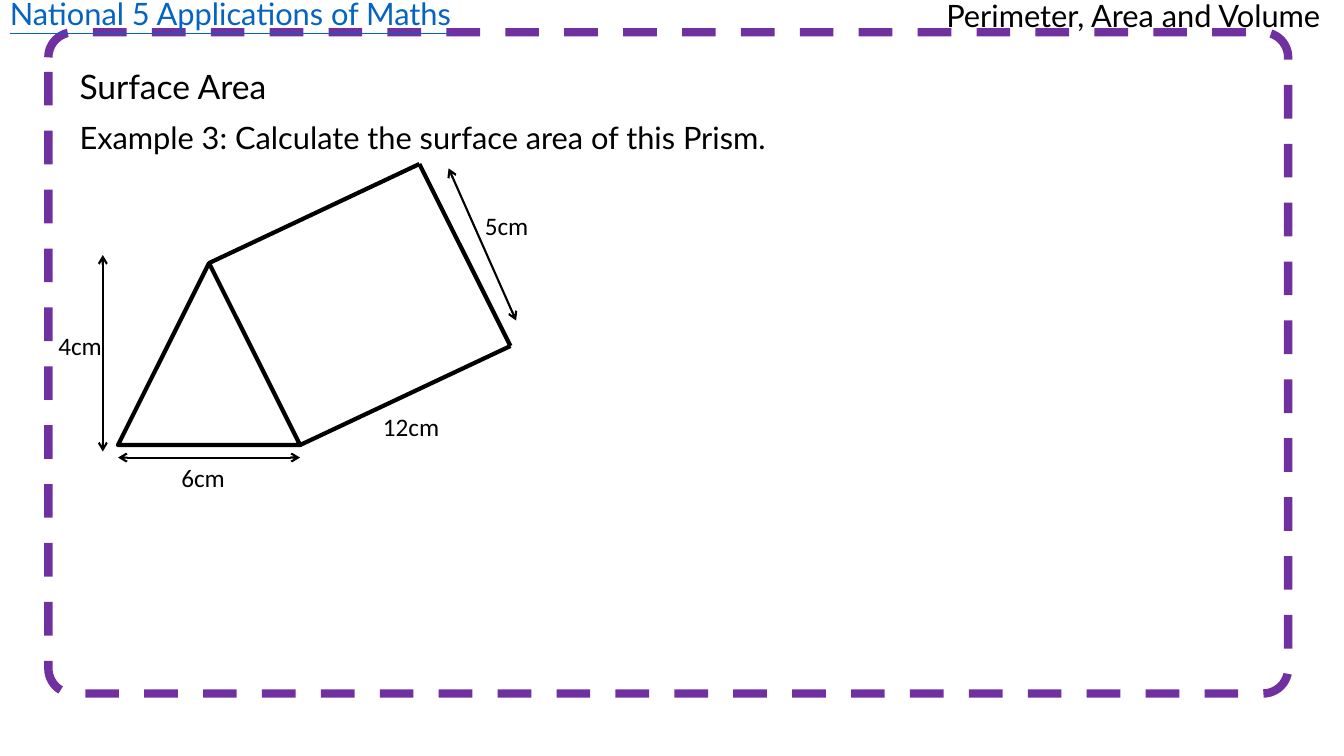
import pptx
import pptx.util
import pptx.dml.color
import pptx.enum.dml
import pptx.enum.shapes
import pptx.enum.text
import pptx.oxml
import pptx.oxml.ns

BLACK = pptx.dml.color.RGBColor(0x00, 0x00, 0x00)
PURPLE = pptx.dml.color.RGBColor(0x70, 0x30, 0xA0)
LINK_BLUE = pptx.dml.color.RGBColor(0x05, 0x63, 0xC1)
SHAPES = pptx.enum.shapes.MSO_SHAPE


class Board:
    """Draws on one slide; every length is a percentage of the slide's size."""

    heading_font = "Lato"
    label_font = "Calibri"
    edge_width = 3
    dimension_width = 1.5

    def __init__(self, presentation):
        self.width = presentation.slide_width
        self.height = presentation.slide_height
        self.slide = presentation.slides.add_slide(presentation.slide_layouts[6])

    def scale(self, *lengths):
        """Turn alternating horizontal and vertical percentages into EMU."""
        sizes = (self.width, self.height) * 2
        return [round(size * length / 100) for size, length in zip(sizes, lengths)]

    def format(self, target, values):
        for name, value in values.items():
            setattr(target, name, value)

    def style_line(self, line, color, width):
        line.color.rgb = color
        line.width = pptx.util.Pt(width)

    def outline(self, preset, box, color, width):
        """Add an unfilled preset shape."""
        shape = self.slide.shapes.add_shape(preset, *self.scale(*box))
        shape.shadow.inherit = False
        shape.fill.background()
        self.style_line(shape.line, color, width)
        return shape

    def text(self, words, box, size, font=heading_font, color=BLACK, wrap=False, underline=None):
        shape = self.slide.shapes.add_textbox(*self.scale(*box))
        self.format(shape.text_frame, {
            "word_wrap": wrap,
            "auto_size": pptx.enum.text.MSO_AUTO_SIZE.SHAPE_TO_FIT_TEXT,
        })
        run = shape.text_frame.paragraphs[0].add_run()
        run.text = words
        self.format(run.font, {
            "name": font, "size": pptx.util.Pt(size), "underline": underline,
        })
        run.font.color.rgb = color

    def edge(self, start, end, width=edge_width):
        connector = self.slide.shapes.add_connector(
            pptx.enum.shapes.MSO_CONNECTOR.STRAIGHT, *self.scale(*start, *end))
        self.style_line(connector.line, BLACK, width)
        properties = connector._element.spPr
        properties.append(pptx.oxml.parse_xml(
            f"<a:effectLst {pptx.oxml.ns.nsdecls('a')}/>"))
        return connector

    def dimension(self, start, end):
        """Add a double-headed measuring arrow."""
        line = self.edge(start, end, self.dimension_width)._element.spPr.get_or_add_ln()
        for tag in ("headEnd", "tailEnd"):
            line.append(pptx.oxml.parse_xml(
                f"<a:{tag} {pptx.oxml.ns.nsdecls('a')} type='arrow'/>"))

    def label(self, words, corner, width=4.8):
        self.text(words, (*corner, width, 5.33), 18, self.label_font)


def draw_prism(board):
    left, top, width, height = 8.78, 34.8, 13.55, 24.07
    depth_x, depth_y = 15.65, -13.1
    apex = (left + width / 2, top)
    corner = (left + width, top + height)
    far_apex, far_corner = [(x + depth_x, y + depth_y) for x, y in (apex, corner)]

    board.outline(SHAPES.FLOWCHART_EXTRACT, (left, top, width, height),
                  BLACK, board.edge_width)
    for start, end in ((apex, far_apex), (corner, far_corner), (far_apex, far_corner)):
        board.edge(start, end)

    board.dimension((left, 60.53), (left + width, 60.53))
    board.label("6cm", (12.75, 60.53))
    board.dimension((7.65, 59.73), (7.65, 33.73))
    board.label("4cm", (3.6, 43.07))
    board.label("12cm", (27.75, 53.73), 5.78)
    board.dimension((38.4, 42.4), (33.38, 22.27))
    board.label("5cm", (35.33, 27.2))


def main():
    presentation = pptx.Presentation()
    presentation.slide_width = pptx.util.Inches(13.33)
    presentation.slide_height = pptx.util.Inches(7.5)
    board = Board(presentation)

    frame = board.outline(SHAPES.ROUNDED_RECTANGLE, (3.6, 4.27, 92.25, 87.47), PURPLE, 6)
    frame.adjustments[0] = 0.038
    frame.line.dash_style = pptx.enum.dml.MSO_LINE.DASH

    board.text("Perimeter, Area and Volume", (69.68, -1.07, 30.32, 6.27), 22)
    board.text("National 5 Applications of Maths", (0, -1.33, 34.73, 6.27), 22,
               color=LINK_BLUE, underline=True)
    board.text("Surface Area", (5.18, 8, 43.73, 6.67), 24, wrap=True)
    board.text("Example 3: Calculate the surface area of this Prism.",
               (5.18, 15.07, 70, 6.27), 22, wrap=True)
    draw_prism(board)
    presentation.save("out.pptx")


if __name__ == "__main__":
    main()
